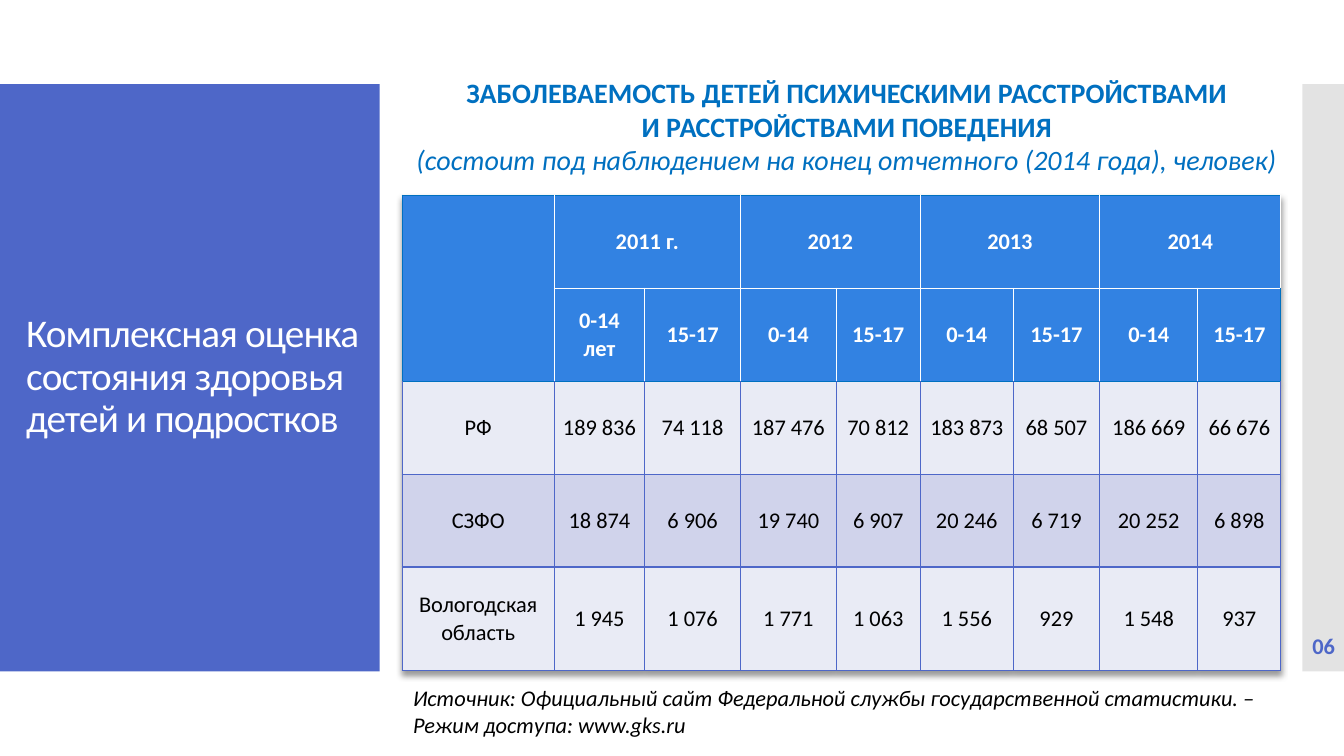
from lxml import etree
from pptx import Presentation
from pptx.dml.color import RGBColor
from pptx.enum.shapes import MSO_SHAPE as SHAPE
from pptx.enum.text import MSO_ANCHOR as ANCHOR, PP_ALIGN as ALIGN
from pptx.oxml import parse_xml
from pptx.oxml.ns import qn, nsdecls
from pptx.util import Pt

# Content
TITLE = "Комплексная оценка состояния здоровья детей и подростков"
HEADING = ["ЗАБОЛЕВАЕМОСТЬ ДЕТЕЙ ПСИХИЧЕСКИМИ РАССТРОЙСТВАМИ",
           "И РАССТРОЙСТВАМИ ПОВЕДЕНИЯ"]
SUBHEADING = "(состоит под наблюдением на конец отчетного (2014 года), человек)"
SOURCE = ("Источник: Официальный сайт Федеральной службы государственной "
          "статистики. – Режим доступа: www.gks.ru")
PAGE = "06"
YEARS = ["2011 г.", "2012", "2013", "2014"]
AGES = ["0-14\nлет", "15-17"] + ["0-14", "15-17"] * 3
DATA = [
    ["РФ", "189 836", "74 118", "187 476", "70 812",
     "183 873", "68 507", "186 669", "66 676"],
    ["СЗФО", "18 874", "6 906", "19 740", "6 907",
     "20 246", "6 719", "20 252", "6 898"],
    ["Вологодская область", "1 945", "1 076", "1 771", "1 063",
     "1 556", "929", "1 548", "937"],
]
COLS = [108.6, 64.6, 68.5, 68.4, 60, 66.5, 61.7, 70.1, 59.4]
ROWS = [66.4, 66.4, 66.4, 66.4, 74]
INDIGO, BLUE, HEAD = "4E67C8", "0070C0", "3282E2"
WHITE, BLACK, GREY = "FFFFFF", "000000", "C8C8C8"
BANDS = ["E9EBF5", "D0D3EB"]

prs = Presentation()
prs.slide_width, prs.slide_height = Pt(960), Pt(540)
s = prs.slides.add_slide(prs.slide_layouts[6])


def rgb(code):
    return RGBColor.from_string(code)


def write(tf, text, size=16, color=BLACK, bold=False, italic=False,
          align=ALIGN.LEFT, spacing=None, tracking=None, more=False):
    for i, line in enumerate(text.split("\n")):
        p = tf.add_paragraph() if more or i else tf.paragraphs[0]
        p.alignment = align
        if spacing:
            p.line_spacing = spacing
        r = p.add_run()
        r.text = line
        f = r.font
        f.name, f.size, f.bold, f.italic = "Calibri", Pt(size), bold, italic
        f.color.rgb = rgb(color)
        if tracking:
            f._element.set("spc", str(round(tracking * 100)))


def add_box(x, y, w, h, anchor=ANCHOR.TOP, inset=True):
    tf = s.shapes.add_textbox(Pt(x), Pt(y), Pt(w), Pt(h)).text_frame
    tf.word_wrap = True
    tf.vertical_anchor = anchor
    if not inset:
        tf.margin_left = tf.margin_right = tf.margin_top = tf.margin_bottom = 0
    return tf


def add_panel(x, w, color, alpha=None):
    sp = s.shapes.add_shape(SHAPE.RECTANGLE, Pt(x), Pt(60), Pt(w), Pt(419.5))
    sp.shadow.inherit = False
    sp.fill.solid()
    sp.fill.fore_color.rgb = rgb(color)
    sp.line.fill.background()
    if alpha:
        clr = sp._element.spPr.find(".//" + qn("a:srgbClr"))
        etree.SubElement(clr, qn("a:alpha")).set("val", str(alpha * 1000))


def set_borders(cell, colors):
    tc_pr = cell._tc.get_or_add_tcPr()
    for i, (side, color) in enumerate(zip("LRTB", colors)):
        tc_pr.insert(i, parse_xml(
            f'<a:ln{side} {nsdecls("a")} w="12700"><a:solidFill>'
            f'<a:srgbClr val="{color}"/></a:solidFill></a:ln{side}>'))


def border_colors(row, col):
    if row > 1:
        return INDIGO, INDIGO, BLUE if row == 2 else INDIGO, INDIGO
    return (WHITE if col else BLUE,
            BLUE if col == len(COLS) - 1 else WHITE,
            WHITE if row and col else BLUE,
            BLUE if row or not col else WHITE)


# Side panels
add_panel(0, 271.2, INDIGO)
add_panel(930.2, 29.8, GREY, alpha=50)

# Heading
tf = add_box(279.4, 50.4, 651, 80)
write(tf, "\n".join(HEADING), size=20, color=BLUE, bold=True, align=ALIGN.CENTER)
write(tf, SUBHEADING, size=20, color=BLUE, italic=True, align=ALIGN.CENTER, more=True)

# Table
year_row = [""] + [text for year in YEARS for text in (year, "")]
grid = [year_row, [""] + AGES] + DATA
frame = s.shapes.add_table(len(ROWS), len(COLS), Pt(287.3), Pt(139.5),
                           Pt(sum(COLS)), Pt(sum(ROWS)))
table = frame.table
for col, width in zip(table.columns, COLS):
    col.width = Pt(width)
for row, height in zip(table.rows, ROWS):
    row.height = Pt(height)
for i, texts in enumerate(grid):
    header = i < 2
    for j, text in enumerate(texts):
        cell = table.cell(i, j)
        cell.fill.solid()
        cell.fill.fore_color.rgb = rgb(HEAD if header else BANDS[i % 2])
        set_borders(cell, border_colors(i, j))
        cell.vertical_anchor = ANCHOR.MIDDLE
        cell.margin_left = cell.margin_right = 0
        cell.margin_top = cell.margin_bottom = 0
        if text:
            write(cell.text_frame, text, color=WHITE if header else BLACK,
                  bold=header, align=ALIGN.CENTER)
table.cell(0, 0).merge(table.cell(1, 0))
for j in range(1, len(COLS), 2):
    table.cell(0, j).merge(table.cell(0, j + 1))

# Soft shadow under the table
table._tbl.tblPr.insert(0, parse_xml(
    f'<a:effectLst {nsdecls("a")}><a:outerShdw blurRad="50800" dist="38100" '
    'dir="5400000" algn="t" rotWithShape="0"><a:srgbClr val="000000">'
    '<a:alpha val="40000"/></a:srgbClr></a:outerShdw></a:effectLst>'))

# Source, slide title and page number
write(add_box(288, 485.3, 656.6, 46), SOURCE, italic=True)
write(add_box(11.5, 88.6, 255.6, 362, ANCHOR.MIDDLE), TITLE, size=28,
      color=WHITE, spacing=0.9, tracking=-0.6)
write(add_box(931, 446.4, 29, 29, ANCHOR.MIDDLE, inset=False), PAGE,
      color=INDIGO, bold=True, align=ALIGN.CENTER)

prs.save("out.pptx")
